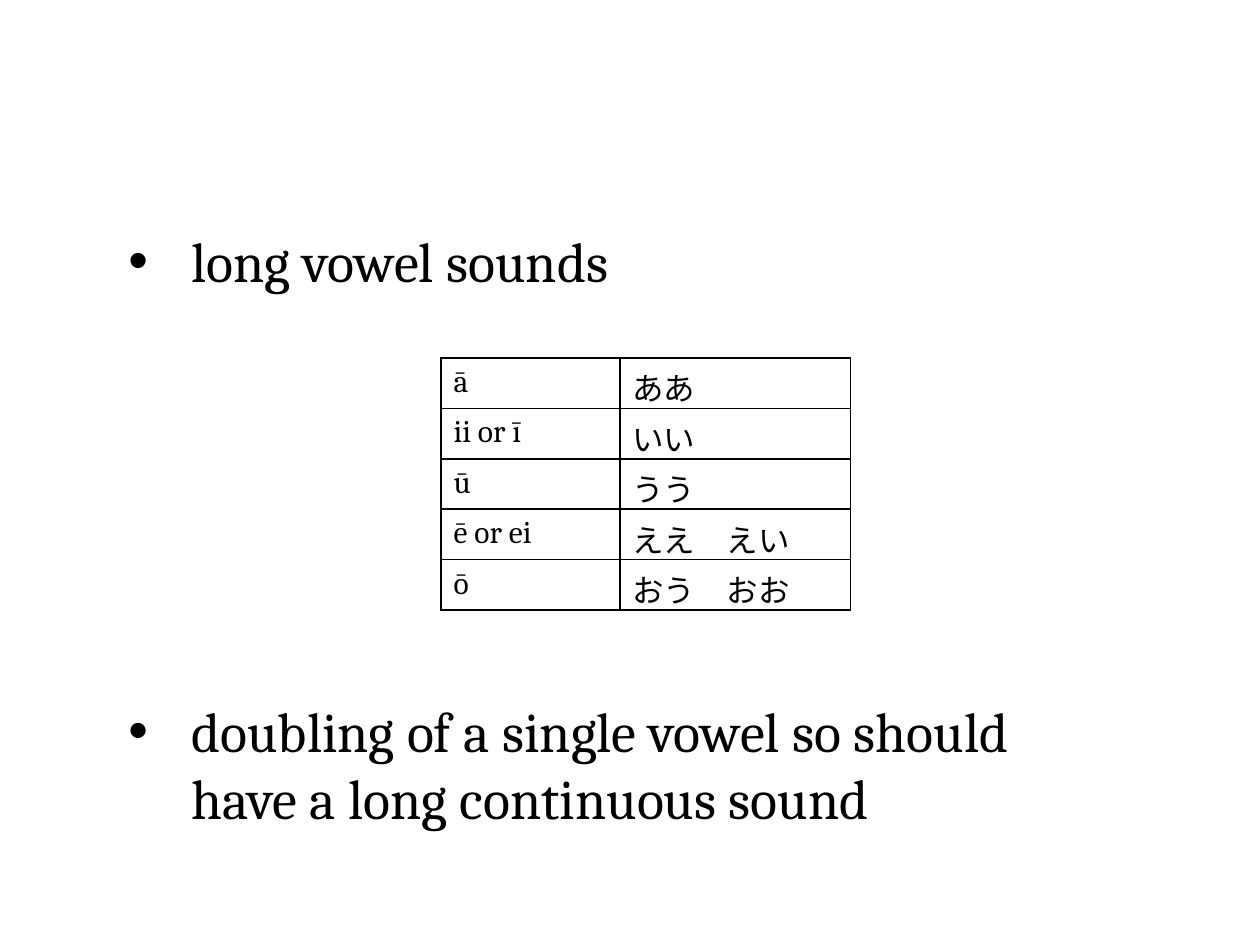
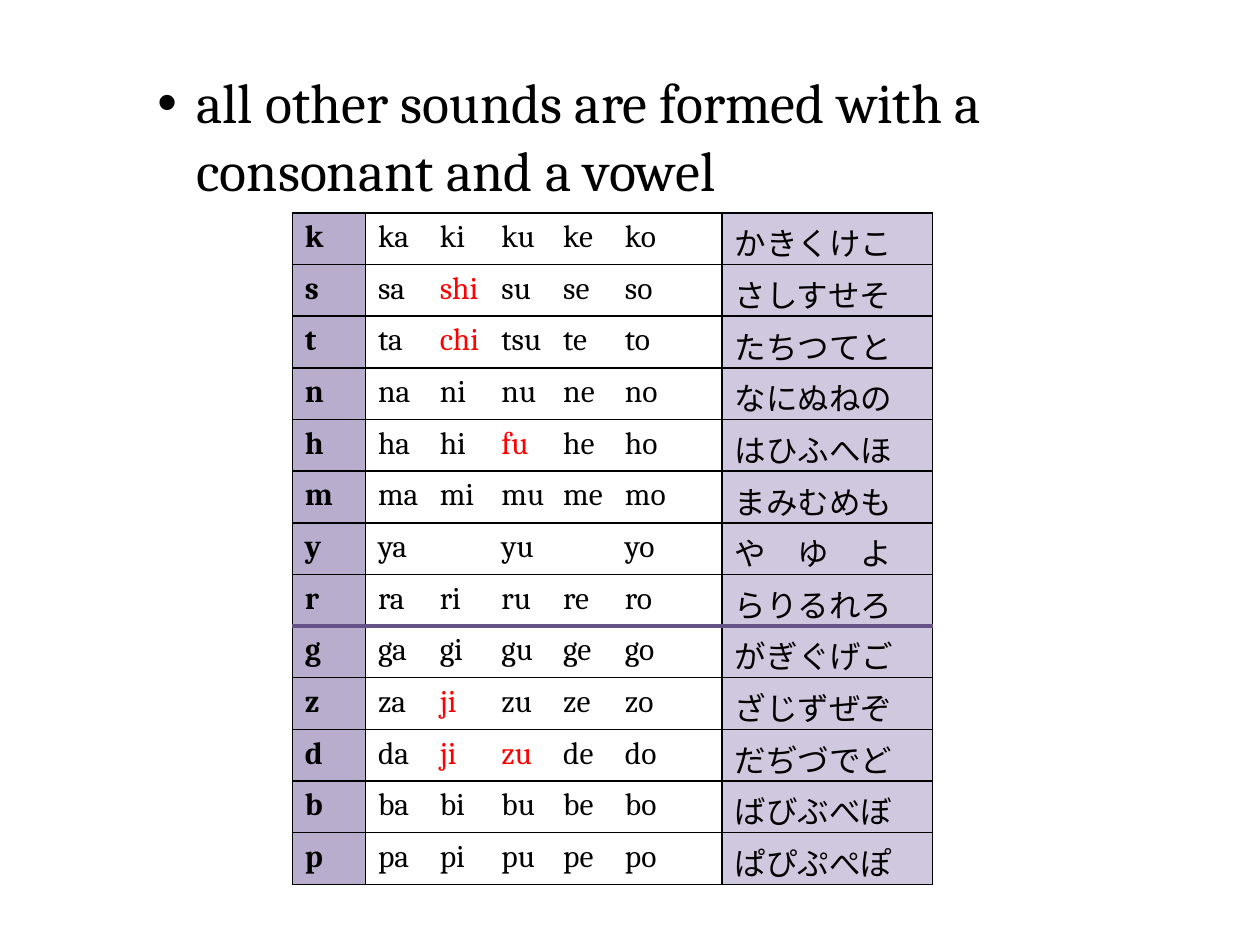
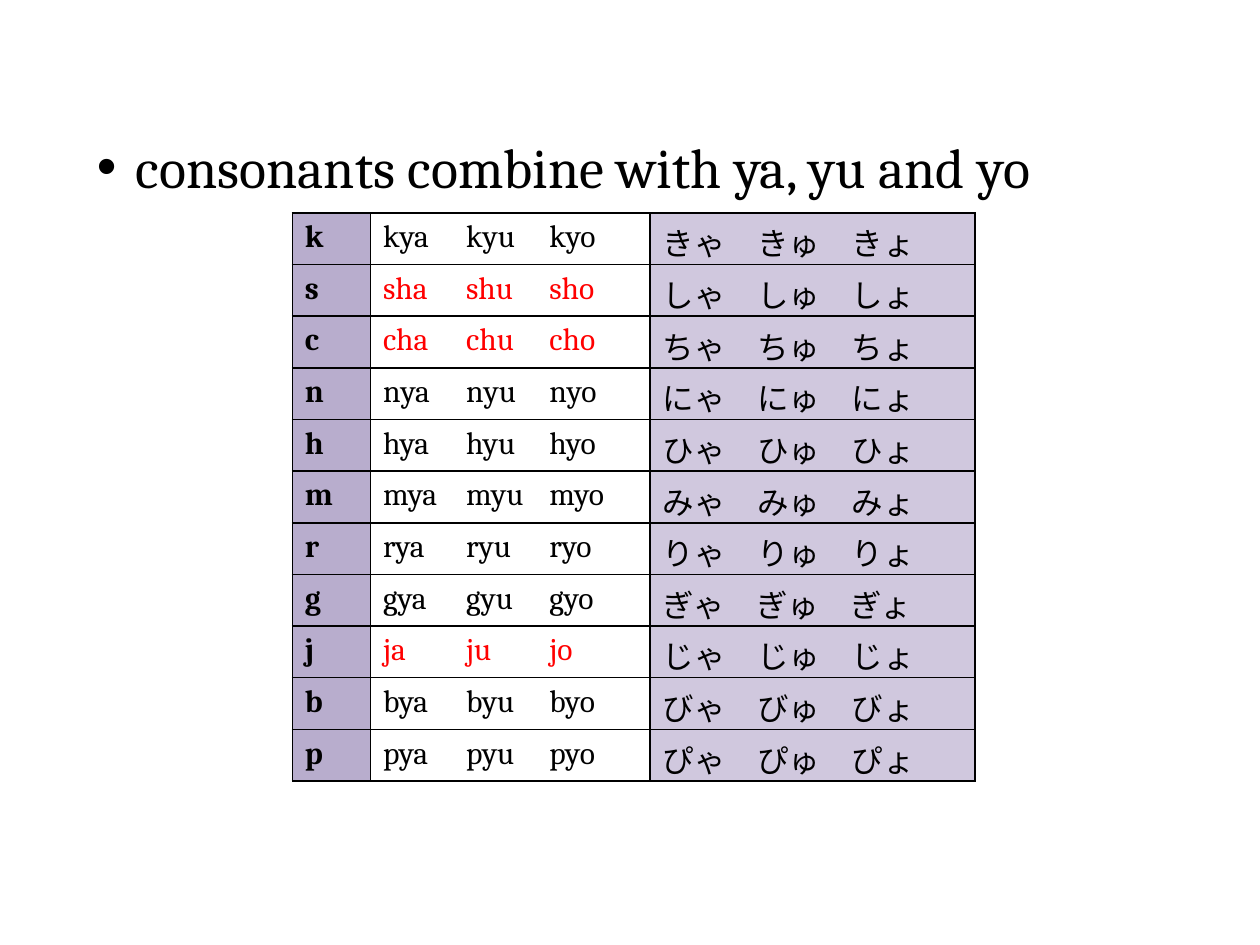
from lxml import etree
from pptx import Presentation
from pptx.dml.color import RGBColor
from pptx.enum.text import MSO_AUTO_SIZE
from pptx.oxml.ns import qn
from pptx.util import Inches, Pt

FIT_SHAPE = MSO_AUTO_SIZE.SHAPE_TO_FIT_TEXT
FONT = "Cambria"
BLACK = RGBColor(0x00, 0x00, 0x00)
RED = RGBColor(0xFF, 0x00, 0x00)
HEAD_PURPLE = RGBColor(0xB8, 0xAD, 0xCD)
KANA_PURPLE = RGBColor(0xD0, 0xC8, 0xDE)
RULE_PURPLE = RGBColor(0x65, 0x52, 0x87)
THIN, THICK = (BLACK, 1), (RULE_PURPLE, 3)

# Content: "*" marks an irregular sound, "_" an empty place in the row
LONG_VOWELS = [
    ("ā", "ああ"),
    ("ii or ī", "いい"),
    ("ū", "うう"),
    ("ē or ei", "ええ　えい"),
    ("ō", "おう　おお"),
]
SYLLABLES = [
    ("k", "ka ki ku ke ko", "かきくけこ"),
    ("s", "sa *shi su se so", "さしすせそ"),
    ("t", "ta *chi tsu te to", "たちつてと"),
    ("n", "na ni nu ne no", "なにぬねの"),
    ("h", "ha hi *fu he ho", "はひふへほ"),
    ("m", "ma mi mu me mo", "まみむめも"),
    ("y", "ya _ yu _ yo", "や　ゆ　よ"),
    ("r", "ra ri ru re ro", "らりるれろ"),
    ("g", "ga gi gu ge go", "がぎぐげご"),
    ("z", "za *ji zu ze zo", "ざじずぜぞ"),
    ("d", "da *ji *zu de do", "だぢづでど"),
    ("b", "ba bi bu be bo", "ばびぶべぼ"),
    ("p", "pa pi pu pe po", "ぱぴぷぺぽ"),
]
COMBINED = [
    ("k", "kya kyu kyo", "きゃ　きゅ　きょ"),
    ("s", "*sha *shu *sho", "しゃ　しゅ　しょ"),
    ("c", "*cha *chu *cho", "ちゃ　ちゅ　ちょ"),
    ("n", "nya nyu nyo", "にゃ　にゅ　にょ"),
    ("h", "hya hyu hyo", "ひゃ　ひゅ　ひょ"),
    ("m", "mya myu myo", "みゃ　みゅ　みょ"),
    ("r", "rya ryu ryo", "りゃ　りゅ　りょ"),
    ("g", "gya gyu gyo", "ぎゃ　ぎゅ　ぎょ"),
    ("j", "*ja *ju *jo", "じゃ　じゅ　じょ"),
    ("b", "bya byu byo", "びゃ　びゅ　びょ"),
    ("p", "pya pyu pyo", "ぴゃ　ぴゅ　ぴょ"),
]
SLIDES = [
    dict(points=["long vowel sounds",
                 "doubling of a single vowel so should have a long continuous sound"],
         points_at=(0.92, 1.75, 7.92, 5.49), hang=0.5, point_gap=230,
         rows=LONG_VOWELS, table_at=(3.5, 2.84), columns=(1.42, 1.83),
         row_height=0.4),
    dict(points=["all other sounds are formed with a consonant and a vowel"],
         points_at=(1.15, 0.49, 7.42, 1.18), hang=0.31,
         rows=SYLLABLES, table_at=(2.32, 1.69), columns=(0.58, 2.83, 1.67),
         row_height=0.41, sound_step=0.49, ruled_after="r"),
    dict(points=["consonants combine with ya, yu and yo"],
         points_at=(0.67, 1, 8.08, 0.64), hang=0.31,
         rows=COMBINED, table_at=(2.32, 1.69), columns=(0.62, 2.22, 2.58),
         row_height=0.41, sound_step=0.66),
]


def write(paragraph, text, size=18, color=BLACK, bold=False):
    run = paragraph.add_run()
    run.text = text
    run.font.name, run.font.size, run.font.bold = FONT, Pt(size), bold
    run.font.color.rgb = color


def add_points(slide, points, at, hang, gap):
    box = slide.shapes.add_textbox(*map(Inches, at))
    frame = box.text_frame
    frame.word_wrap, frame.auto_size = True, FIT_SHAPE
    for index, point in enumerate(points):
        paragraph = frame.add_paragraph() if index else frame.paragraphs[0]
        props = paragraph._p.get_or_add_pPr()
        props.set("marL", str(Inches(hang)))
        props.set("indent", str(-Inches(hang)))
        etree.SubElement(props, qn("a:buFont")).set("typeface", "Arial")
        etree.SubElement(props, qn("a:buChar")).set("char", "•")
        if index:
            paragraph.space_before = Pt(gap)
        write(paragraph, point, size=32)


def write_sounds(paragraph, sounds, step):
    """Line the sounds up on equally spaced tab stops."""
    words = sounds.split()
    stops = etree.SubElement(paragraph._p.get_or_add_pPr(), qn("a:tabLst"))
    for number, word in enumerate(words):
        if number:
            stop = etree.SubElement(stops, qn("a:tab"))
            stop.set("pos", str(Inches(step * number)))
            stop.set("algn", "l")
        text = ("\t" if number else "") + word.strip("*_")
        write(paragraph, text, color=RED if word.startswith("*") else BLACK)


def set_borders(cell, top, bottom):
    props = cell._tc.get_or_add_tcPr()
    for side, (color, width) in zip("LRTB", (THIN, THIN, top, bottom)):
        line = etree.SubElement(props, qn("a:ln" + side))
        line.set("w", str(Pt(width)))
        fill = etree.SubElement(line, qn("a:solidFill"))
        etree.SubElement(fill, qn("a:srgbClr")).set("val", str(color))


def add_sound_table(slide, rows, at, columns, row_height, step, ruled_after):
    left, top = at
    size = sum(columns), row_height * len(rows)
    table = slide.shapes.add_table(
        len(rows), len(columns), *map(Inches, (left, top, *size))).table
    table.first_row = table.horz_banding = False
    for column, width in zip(table.columns, columns):
        column.width = Inches(width)
    fills = (HEAD_PURPLE, None, KANA_PURPLE) if step else (None, None)

    above = THIN
    for r, row in enumerate(rows):
        table.rows[r].height = Inches(row_height)
        below = THICK if row[0] == ruled_after else THIN
        for c, (text, fill) in enumerate(zip(row, fills)):
            cell = table.cell(r, c)
            set_borders(cell, above, below)
            if fill:
                cell.fill.solid()
                cell.fill.fore_color.rgb = fill
            else:
                cell.fill.background()
            paragraph = cell.text_frame.paragraphs[0]
            if step and c == 1:
                write_sounds(paragraph, text, step)
            else:
                write(paragraph, text, bold=bool(step) and c == 0)
        above = below


def main():
    deck = Presentation()
    deck.slide_width, deck.slide_height = Inches(10), Inches(7.5)
    for page in SLIDES:
        slide = deck.slides.add_slide(deck.slide_layouts[6])
        add_points(slide, page["points"], page["points_at"], page["hang"],
                   page.get("point_gap", 0))
        add_sound_table(slide, page["rows"], page["table_at"], page["columns"],
                        page["row_height"], page.get("sound_step"),
                        page.get("ruled_after"))
    deck.save("out.pptx")


if __name__ == "__main__":
    main()
